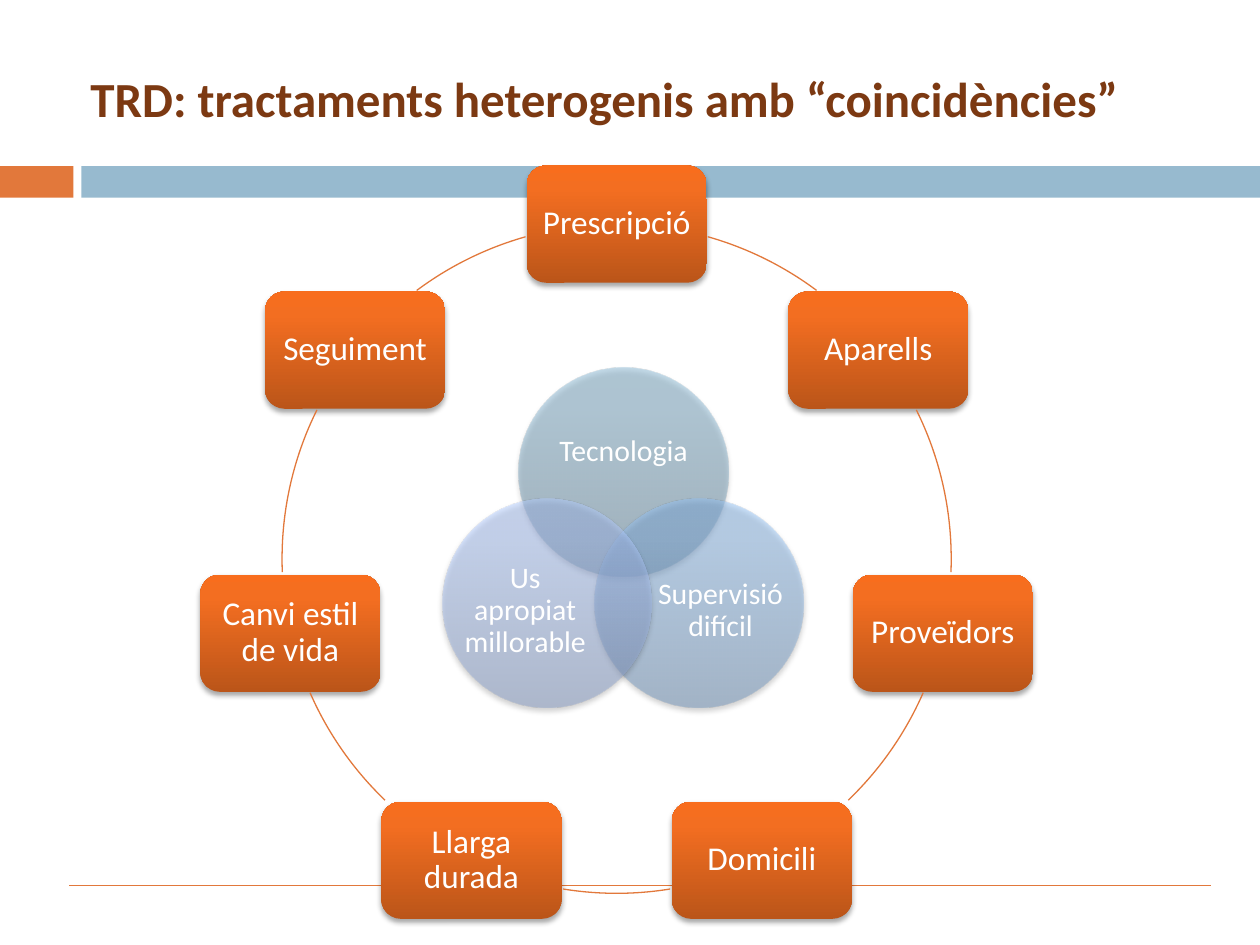
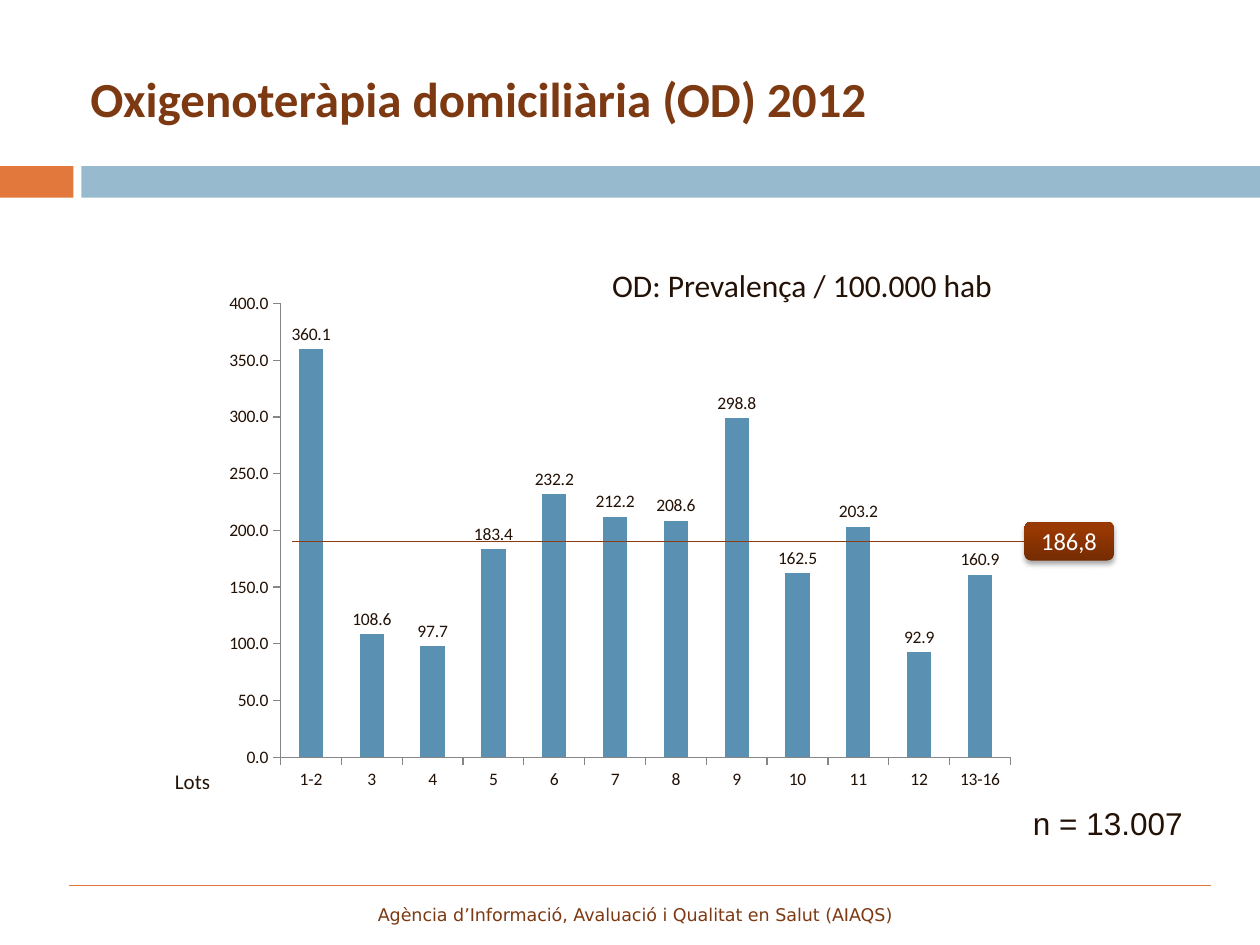
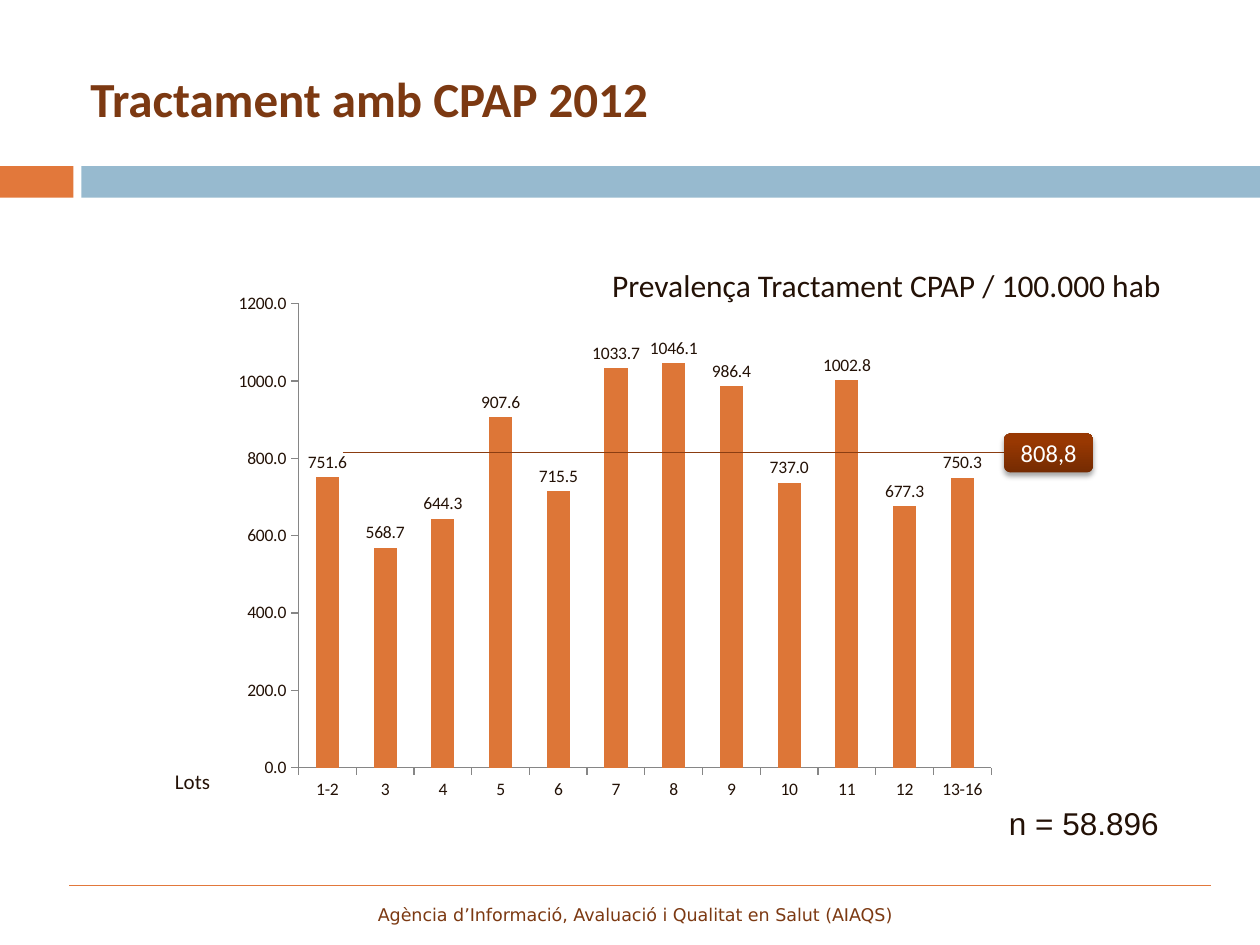
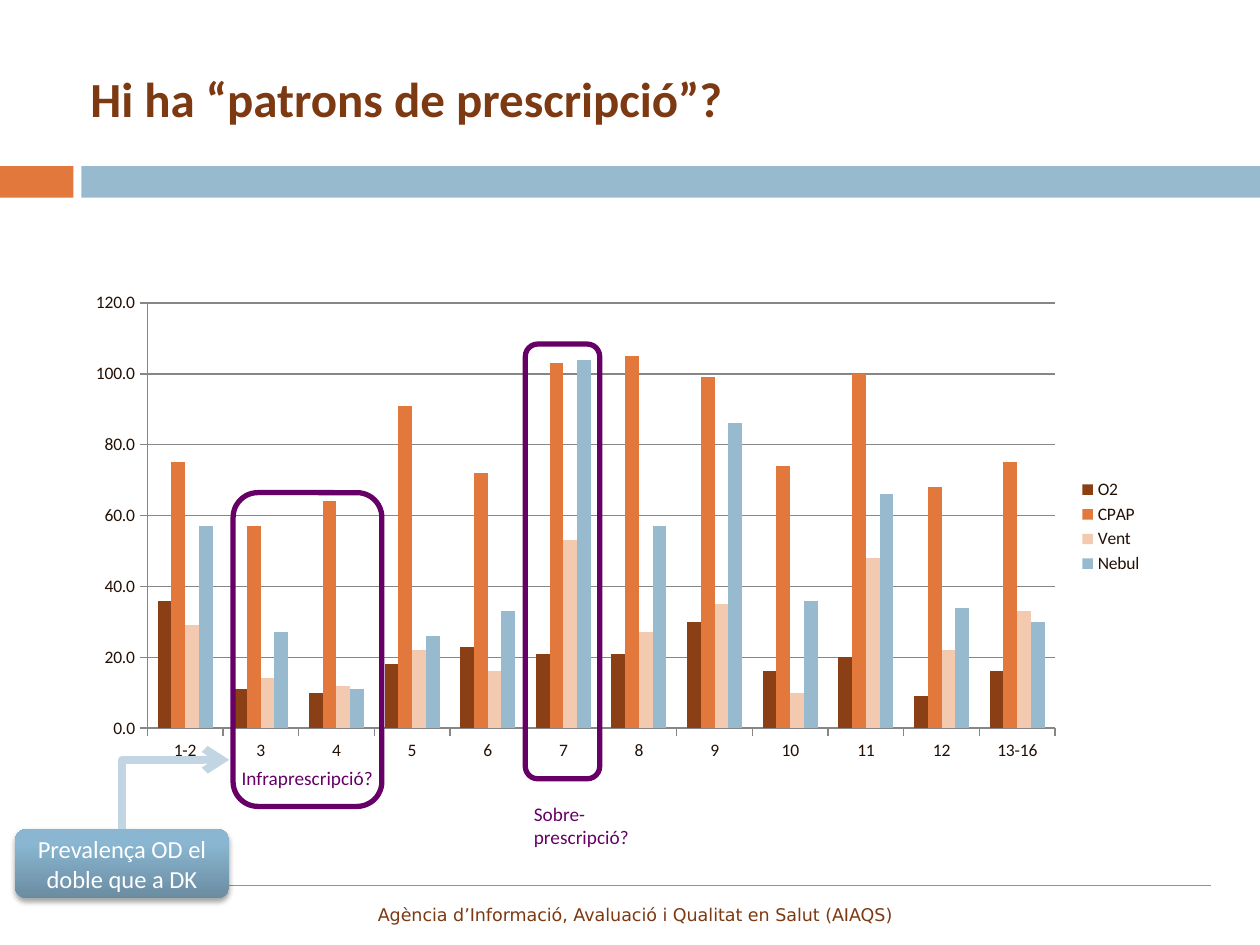
import math

import lxml.etree
import pptx
import pptx.chart.data
import pptx.dml.color
import pptx.enum.chart
import pptx.enum.shapes
import pptx.enum.text
import pptx.oxml.ns
import pptx.util


class Theme:
    orange = "E2783B"
    blue = "97BACF"
    title = "7C3912"
    ink = "231106"
    white = "FFFFFF"
    purple = "660066"
    average = "8B3D11"
    arrow = "C1D6E2"
    axis = "868686"
    od_bar = "5A91B3"
    cpap_bar = "DD7637"
    treatments = ["8B3F14", "E2783B", "F3C9B0", "97BACF"]
    # Gradients run from the bottom colour to the top colour.
    glossy_orange = ["BB5519", "F36E21", "F86D1D"]
    glossy_brown = ["752B02", "983802", "9B3800"]
    glossy_teal = ["6A8CA1", "8AB6D1", "89B7D3"]
    glossy_blue = ["7295BA", "95C1F1", "94C2F4"]
    glossy_lilac = ["889DC5", "B2CCFF", "B4CDFF"]
    stops = [0, 80, 100]
    font = "Calibri"
    number_font = "Arial"
    footer_font = "DejaVu Sans"
    title_size = 28
    node_size = 19
    caption_size = 18
    venn_size = 17
    badge_size = 14
    lots_size = 12
    note_size = 11
    small_size = 10
    thin = 0.75


SHAPE = pptx.enum.shapes.MSO_SHAPE
CONNECTOR = pptx.enum.shapes.MSO_CONNECTOR
ANCHOR = pptx.enum.text.MSO_ANCHOR
CENTER = pptx.enum.text.PP_ALIGN.CENTER
RGB = pptx.dml.color.RGBColor.from_string
qn = pptx.oxml.ns.qn


def write(sp, lines, size, color, font=Theme.font, bold=False, align=None,
          anchor=ANCHOR.TOP, margins=(7.2, 3.6), spacing=None, wrap=True):
    """Write each line as a paragraph; margins are horizontal, vertical."""
    tf = sp.text_frame
    tf.word_wrap = wrap
    tf.vertical_anchor = anchor
    tf.margin_left = tf.margin_right = pptx.util.Pt(margins[0])
    tf.margin_top = tf.margin_bottom = pptx.util.Pt(margins[1])
    for i, line in enumerate(lines):
        p = tf.add_paragraph() if i else tf.paragraphs[0]
        p.alignment = align
        p.line_spacing = spacing
        r = p.add_run()
        r.text = line
        r.font.size = pptx.util.Pt(size)
        r.font.name = font
        r.font.bold = bold
        r.font.color.rgb = RGB(color)


def add_glossy(s, kind, box, colors, opacity=100):
    """Add a shape with a vertical gradient and a soft shadow below it."""
    sp = s.shapes.add_shape(kind, *map(pptx.util.Pt, box))
    sp.line.fill.background()
    sp.fill.gradient()
    sp.fill.gradient_angle = 90
    sp.shadow.inherit = False
    spPr = sp.element.spPr
    gs_list = spPr.find(".//" + qn("a:gsLst"))
    gs_list.clear()
    effects = spPr.find(qn("a:effectLst"))
    shadow = lxml.etree.SubElement(
        effects, qn("a:outerShdw"), blurRad=str(pptx.util.Pt(3.1)),
        dist=str(pptx.util.Pt(1.8)), dir="5400000", rotWithShape="0")
    tints = [(shadow, "000000", 35)]
    for stop, color in zip(Theme.stops, colors):
        gs = lxml.etree.SubElement(gs_list, qn("a:gs"), pos=str(stop * 1000))
        tints.append((gs, color, opacity))
    for parent, color, alpha in tints:
        clr = lxml.etree.SubElement(parent, qn("a:srgbClr"), val=color)
        lxml.etree.SubElement(clr, qn("a:alpha"), val=str(alpha * 1000))
    return sp


prs = pptx.Presentation()
prs.slide_width = pptx.util.Pt(720)
prs.slide_height = pptx.util.Pt(540)

# Bands, rule, title and footer of every slide
titles = [
    "TRD: tractaments heterogenis amb “coincidències”",
    "Oxigenoteràpia domiciliària (OD) 2012",
    "Tractament amb CPAP 2012",
    "Hi ha “patrons de prescripció”?",
]
for i, title in enumerate(titles):
    s = prs.slides.add_slide(prs.slide_layouts[6])
    for left, width, color in [(0, 42, Theme.orange), (46.5, 673.5, Theme.blue)]:
        band = s.shapes.add_shape(
            SHAPE.RECTANGLE, *map(pptx.util.Pt, (left, 95, width, 18)))
        band.fill.solid()
        band.fill.fore_color.rgb = RGB(color)
        band.line.fill.background()
        band.shadow.inherit = False
    rule = s.shapes.add_connector(
        CONNECTOR.STRAIGHT, *map(pptx.util.Pt, (39.5, 506, 692, 506)))
    rule.line.color.rgb = RGB(Theme.orange)
    rule.line.width = pptx.util.Pt(Theme.thin)
    sp = s.shapes.add_textbox(*map(pptx.util.Pt, (44.6, 22.3, 639.4, 67.7)))
    write(sp, [title], Theme.title_size, Theme.title, bold=True,
          anchor=ANCHOR.MIDDLE)
    if i:
        sp = s.shapes.add_textbox(*map(pptx.util.Pt, (39.6, 506.2, 646.6, 26)))
        write(sp, ["Agència d’Informació, Avaluació i Qualitat en Salut (AIAQS)"],
              Theme.small_size, Theme.title, Theme.footer_font, align=CENTER,
              anchor=ANCHOR.BOTTOM)

# Slide 1: ring of seven steps around three overlapping circles
s = prs.slides[0]
ring_x, ring_y, radius = 352.4, 319.3, 191.2
node_w, node_h = 103, 67
nodes = ["Prescripció", "Aparells", "Proveïdors", "Domicili", "Llarga durada",
         "Canvi estil de vida", "Seguiment"]
for i, label in enumerate(nodes):
    angle = 2 * math.pi * i / len(nodes)
    x = ring_x + radius * math.sin(angle)
    y = ring_y - radius * math.cos(angle)
    sp = add_glossy(s, SHAPE.ROUNDED_RECTANGLE,
                    (x - node_w / 2, y - node_h / 2, node_w, node_h),
                    Theme.glossy_orange)
    write(sp, [label], Theme.node_size, Theme.white, align=CENTER,
          anchor=ANCHOR.MIDDLE, margins=(5.8, 5.8), spacing=0.9)

# Degrees clockwise from the top; the left half mirrors the right half
right_arcs = [(15.8, 36.7), (63.6, 92.3), (113.6, 136.2)]
left_arcs = [(360 - end, 360 - start) for start, end in right_arcs]
for arc in right_arcs + [(170.8, 189.2)] + left_arcs:
    sp = s.shapes.add_shape(SHAPE.ARC, *map(pptx.util.Pt, (
        ring_x - radius, ring_y - radius, 2 * radius, 2 * radius)))
    for j, degrees in enumerate(arc):
        sp.adjustments[j] = (degrees - 90) % 360 * 0.6
    sp.fill.background()
    sp.line.color.rgb = RGB(Theme.orange)
    sp.line.width = pptx.util.Pt(Theme.thin)
    sp.shadow.inherit = False

venn = [
    ("Tecnologia", (296.6, 210.2), (312.5, 231, 87.8, 54), Theme.glossy_teal),
    ("Supervisió difícil", (339.8, 285), (375.8, 316, 72, 66.2), Theme.glossy_blue),
    ("Us apropiat millorable", (252.7, 285), (264.2, 316, 72, 66.2),
     Theme.glossy_lilac),
]
for label, corner, text_box, colors in venn:
    add_glossy(s, SHAPE.OVAL, (*corner, 119.5, 119.5), colors, opacity=50)
    sp = s.shapes.add_textbox(*map(pptx.util.Pt, text_box))
    write(sp, [label], Theme.venn_size, Theme.white, align=CENTER,
          anchor=ANCHOR.MIDDLE, margins=(0, 0), spacing=0.9)

# Slides 2 to 4: column charts by lot
lots = ["1-2", "3", "4", "5", "6", "7", "8", "9", "10", "11", "12", "13-16"]
od = [360.1, 108.6, 97.7, 183.4, 232.2, 212.2, 208.6, 298.8, 162.5, 203.2,
      92.9, 160.9]
cpap = [751.6, 568.7, 644.3, 907.6, 715.5, 1033.7, 1046.1, 986.4, 737, 1002.8,
        677.3, 750.3]
patterns = {
    "O2": [36, 11, 10, 18, 23, 21, 21, 30, 16, 20, 9, 16],
    "CPAP": [75, 57, 64, 91, 72, 103, 105, 99, 74, 100, 68, 75],
    "Vent": [29, 14, 12, 22, 16, 53, 27, 35, 10, 48, 22, 33],
    "Nebul": [57, 27, 11, 26, 33, 104, 57, 86, 36, 66, 34, 30],
}
charts = [
    (1, (121.7, 162, 465, 295), {"Series 1": od}, [Theme.od_bar], 400, 50),
    (2, (127.4, 162, 448, 301), {"Series 1": cpap}, [Theme.cpap_bar], 1200, 200),
    (3, (42.5, 162, 617.8, 278), patterns, Theme.treatments, 120, 20),
]
for index, box, series, colors, top, step in charts:
    data = pptx.chart.data.CategoryChartData(number_format="0.0")
    data.categories = lots
    for name, values in series.items():
        data.add_series(name, values)
    chart = prs.slides[index].shapes.add_chart(
        pptx.enum.chart.XL_CHART_TYPE.COLUMN_CLUSTERED,
        *map(pptx.util.Pt, box), data).chart
    chart.font.size = pptx.util.Pt(Theme.small_size)
    chart.font.name = Theme.font
    chart.font.color.rgb = RGB(Theme.ink)
    chart.has_title = False
    several = len(series) > 1
    chart.has_legend = several
    plot = chart.plots[0]
    plot.gap_width = 150
    plot.vary_by_categories = False
    for ser, color in zip(plot.series, colors):
        ser.format.fill.solid()
        ser.format.fill.fore_color.rgb = RGB(color)
        ser.invert_if_negative = False
    value_axis = chart.value_axis
    value_axis.minimum_scale = 0
    value_axis.maximum_scale = top
    value_axis.major_unit = step
    value_axis.has_major_gridlines = several
    value_axis.tick_labels.number_format = "0.0"
    value_axis.tick_labels.number_format_is_linked = False
    for axis in (chart.category_axis, value_axis):
        axis.major_tick_mark = pptx.enum.chart.XL_TICK_MARK.OUTSIDE
        axis.format.line.color.rgb = RGB(Theme.axis)
    if several:
        chart.legend.position = pptx.enum.chart.XL_LEGEND_POSITION.RIGHT
        chart.legend.include_in_layout = False
        value_axis.major_gridlines.format.line.color.rgb = RGB(Theme.axis)
    else:
        plot.has_data_labels = True
        labels = plot.data_labels
        labels.show_value = True
        labels.number_format = "0.0"
        labels.number_format_is_linked = False
        labels.position = pptx.enum.chart.XL_LABEL_POSITION.OUTSIDE_END

# Slides 2 and 3: average line, its badge and the captions
averages = [
    (1, "186,8", (167, 592.6, 309.6), (585.4, 298), "OD: Prevalença / 100.000 hab",
     234, "n = 13.007", 583.2),
    (2, "808,8", (195.8, 575.3, 258.5), (573.8, 247.7),
     "Prevalença Tractament CPAP / 100.000 hab", 331, "n = 58.896", 569.5),
]
for index, mean, (x1, x2, y), corner, caption, caption_w, count, count_x in averages:
    s = prs.slides[index]
    line = s.shapes.add_connector(
        CONNECTOR.STRAIGHT, *map(pptx.util.Pt, (x1, y, x2, y)))
    line.line.color.rgb = RGB(Theme.average)
    line.line.width = pptx.util.Pt(Theme.thin)
    badge = add_glossy(s, SHAPE.ROUNDED_RECTANGLE, (*corner, 51, 22.3),
                       Theme.glossy_brown)
    write(badge, [mean], Theme.badge_size, Theme.white, align=CENTER,
          anchor=ANCHOR.MIDDLE, margins=(0, 0))
    captions = [
        (caption, (342.7, 148.3, caption_w, 28.8), Theme.caption_size, Theme.font),
        ("Lots", (92.9, 435.6, 34.6, 21.6), Theme.lots_size, Theme.font),
        (count, (count_x, 455.8, 100.8, 28.8), Theme.caption_size,
         Theme.number_font),
    ]
    for text, box, size, font in captions:
        sp = s.shapes.add_textbox(*map(pptx.util.Pt, box))
        write(sp, [text], size, Theme.ink, font, wrap=False)

# Slide 4: highlighted lots and the callout with its arrow
s = prs.slides[3]
highlights = [
    (["Infraprescripció?"], (131, 434.2, 90.7, 20.9), (133.2, 281.5, 85, 179.3)),
    (["Sobre-", "prescripció?"], (298, 455, 69, 33.8), (300.2, 196.6, 42.5, 248.4)),
]
for lines, text_box, frame_box in highlights:
    sp = s.shapes.add_textbox(*map(pptx.util.Pt, text_box))
    write(sp, lines, Theme.note_size, Theme.purple, wrap=False)
    frame = s.shapes.add_shape(
        SHAPE.ROUNDED_RECTANGLE, *map(pptx.util.Pt, frame_box))
    frame.fill.background()
    frame.line.color.rgb = RGB(Theme.purple)
    frame.line.width = pptx.util.Pt(3)
    frame.shadow.inherit = False

callout = add_glossy(s, SHAPE.ROUNDED_RECTANGLE, (8.6, 473.8, 122.4, 39.6),
                     Theme.glossy_teal)
write(callout, ["Prevalença OD el doble que a DK"], Theme.badge_size, Theme.white,
      align=CENTER, anchor=ANCHOR.MIDDLE)

# Turned a quarter and flipped, the bend goes up first and then right
arrow = s.shapes.add_connector(
    CONNECTOR.ELBOW, *map(pptx.util.Pt, (80.6, 423.4, 120.2, 484.6)))
arrow.line.color.rgb = RGB(Theme.arrow)
arrow.line.width = pptx.util.Pt(4.5)
spPr = arrow.element.spPr
spPr.find(qn("a:prstGeom")).set("prst", "bentConnector2")
for name, value in [("rot", "5400000"), ("flipH", "1"), ("flipV", "1")]:
    spPr.find(qn("a:xfrm")).set(name, value)
lxml.etree.SubElement(spPr.find(qn("a:ln")), qn("a:tailEnd"), type="arrow")

# Connectors carry no shadow
for s in prs.slides:
    for sp in s.shapes:
        if sp.shape_type == pptx.enum.shapes.MSO_SHAPE_TYPE.LINE:
            lxml.etree.SubElement(sp.element.spPr, qn("a:effectLst"))

prs.save("out.pptx")
